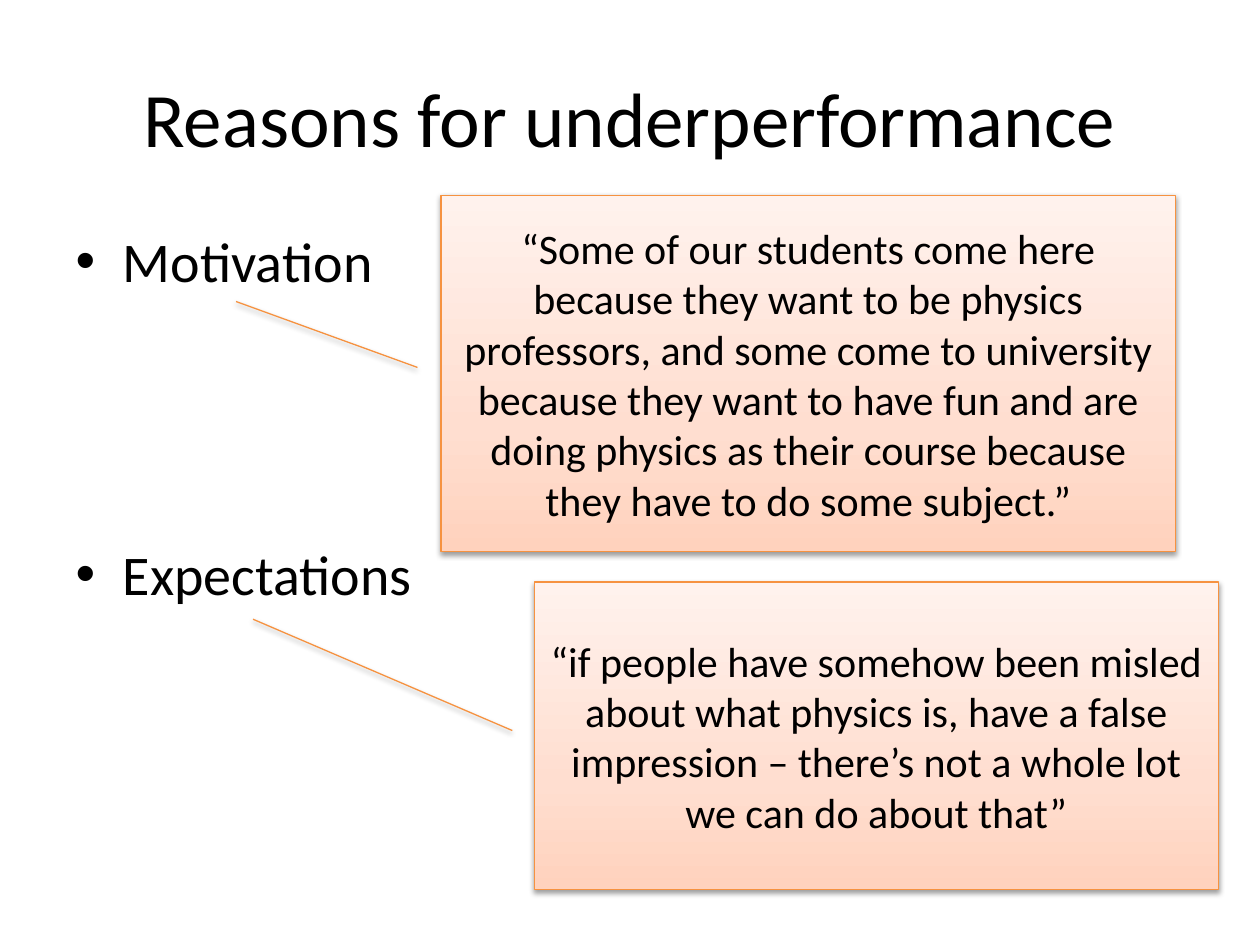
"""Build the slide on reasons for underperformance."""
from lxml import etree
from pptx import Presentation
from pptx.dml.color import RGBColor
from pptx.enum.shapes import MSO_SHAPE
from pptx.enum.text import MSO_ANCHOR, PP_ALIGN
from pptx.oxml.ns import qn
from pptx.util import Inches, Pt

CALLOUT = MSO_SHAPE.LINE_CALLOUT_1
CENTER = PP_ALIGN.CENTER
MIDDLE = MSO_ANCHOR.MIDDLE
TITLE_ONLY_AND_BODY = 1
FONT = "Calibri"
COLORS = {
    "text": "000000",
    "line": "F69240",
    "deep": "FFD2BD",
    "mid": "FFDED0",
    "pale": "FFF2ED",
    "shadow": "000000",
}
GRADIENT = [(0, "deep"), (35, "mid"), (100, "pale")]
REASONS = ["Motivation", "Expectations"]
QUOTES = [
    (
        "“Some of our students come here because they want to be physics "
        "professors, and some come to university because they want to have fun "
        "and are doing physics as their course because they have to do some "
        "subject.”",
        (3.5, 1.55, 5.83, 2.83),
        (0.483, -0.032, 0.298, -0.279),
    ),
    (
        "“if people have somehow been misled about what physics is, have a "
        "false impression – there’s not a whole lot we can do about that”",
        (4.24, 4.62, 5.43, 2.44),
        (0.483, -0.032, 0.121, -0.411),
    ),
]


def place(shape, left, top, width, height):
    """Move and size a shape, in inches."""
    shape.left, shape.top = Inches(left), Inches(top)
    shape.width, shape.height = Inches(width), Inches(height)


def format_text(frame, size):
    """Give every run of a text frame the slide's font."""
    for para in frame.paragraphs:
        for span in para.runs:
            span.font.name = FONT
            span.font.size = Pt(size)
            span.font.color.rgb = RGBColor.from_string(COLORS["text"])


def add_color(parent, name):
    """Append a named colour to an XML element and return it."""
    return etree.SubElement(parent, qn("a:srgbClr"), val=COLORS[name])


def fill_gradient(shape):
    """Fill a shape with the three-stop gradient, deepest at the bottom."""
    shape.fill.gradient()
    shape.fill.gradient_angle = 90
    stops = shape._element.spPr.find(".//" + qn("a:gsLst"))
    for stop in list(stops):
        stops.remove(stop)
    for position, name in GRADIENT:
        stop = etree.SubElement(stops, qn("a:gs"), pos=str(position * 1000))
        add_color(stop, name)


def add_shadow(shape):
    """Give a shape a soft shadow below it."""
    shape.shadow.inherit = False
    effects = shape._element.spPr.find(qn("a:effectLst"))
    shadow = etree.SubElement(
        effects, qn("a:outerShdw"), blurRad=str(Pt(3.1)), dist=str(Pt(1.6)),
        dir="5400000", rotWithShape="0",
    )
    etree.SubElement(add_color(shadow, "shadow"), qn("a:alpha"), val="38000")


def add_title(page, text):
    """Fill the title placeholder."""
    title = page.shapes.title
    place(title, 0.5, 0.3, 9, 1.25)
    frame = title.text_frame
    frame.text = text
    frame.vertical_anchor = MIDDLE
    frame.paragraphs[0].alignment = CENTER
    format_text(frame, 44)


def add_reasons(page, reasons):
    """Fill the body placeholder with widely spaced bullets."""
    body = page.placeholders[1]
    place(body, 0.5, 1.75, 9, 4.95)
    frame = body.text_frame
    frame.text = "\n".join(reasons)
    for para in frame.paragraphs[1:]:
        para.space_before = Pt(140)
    format_text(frame, 32)


def add_quote(page, text, position, pointer):
    """Add a callout with a quote and a line to its reason."""
    left, top, width, height = map(Inches, position)
    callout = page.shapes.add_shape(CALLOUT, left, top, width, height)
    for index, value in enumerate(pointer):
        callout.adjustments[index] = value
    fill_gradient(callout)
    callout.line.color.rgb = RGBColor.from_string(COLORS["line"])
    callout.line.width = Pt(0.75)
    add_shadow(callout)
    frame = callout.text_frame
    frame.word_wrap = True
    frame.vertical_anchor = MIDDLE
    frame.text = text
    frame.paragraphs[0].alignment = CENTER
    format_text(frame, 24)


def main():
    """Build and save the deck."""
    deck = Presentation()
    deck.slide_width, deck.slide_height = Inches(10), Inches(7.5)
    page = deck.slides.add_slide(deck.slide_layouts[TITLE_ONLY_AND_BODY])
    add_title(page, "Reasons for underperformance")
    add_reasons(page, REASONS)
    for text, position, pointer in QUOTES:
        add_quote(page, text, position, pointer)
    deck.save("out.pptx")


if __name__ == "__main__":
    main()
